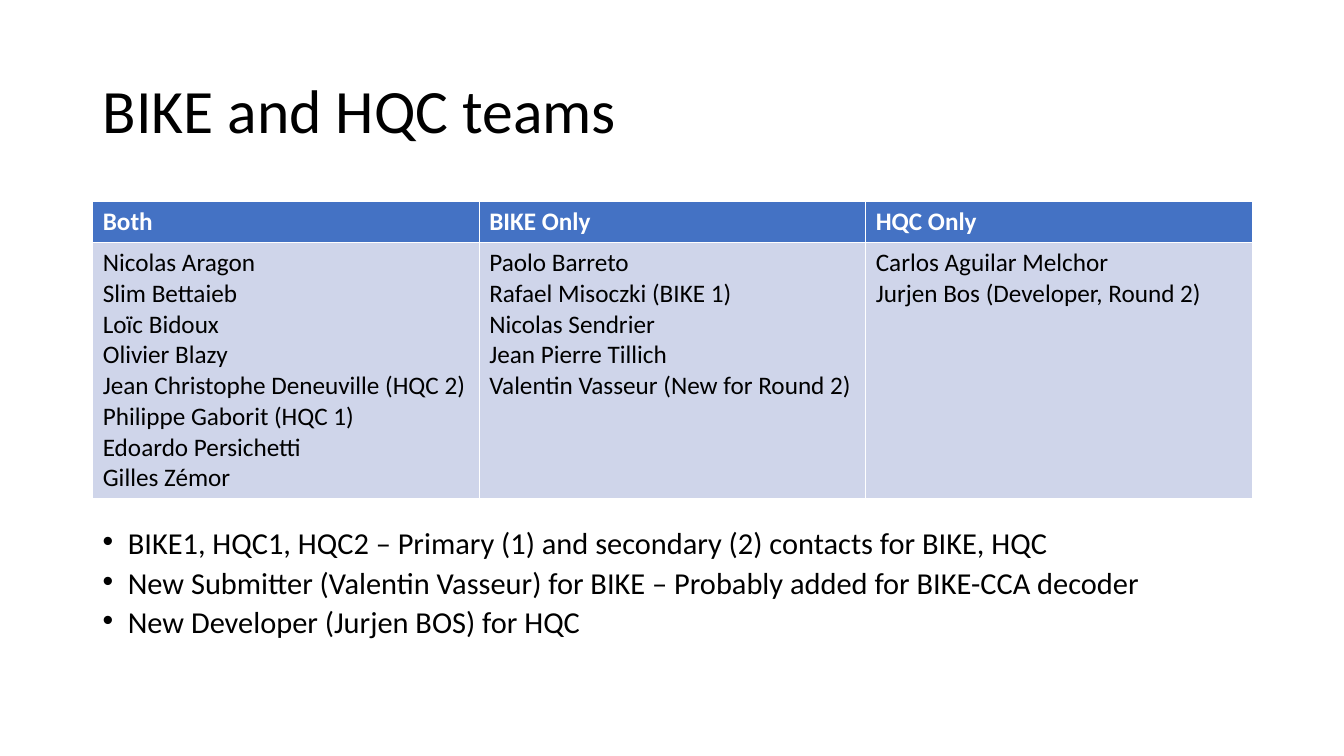
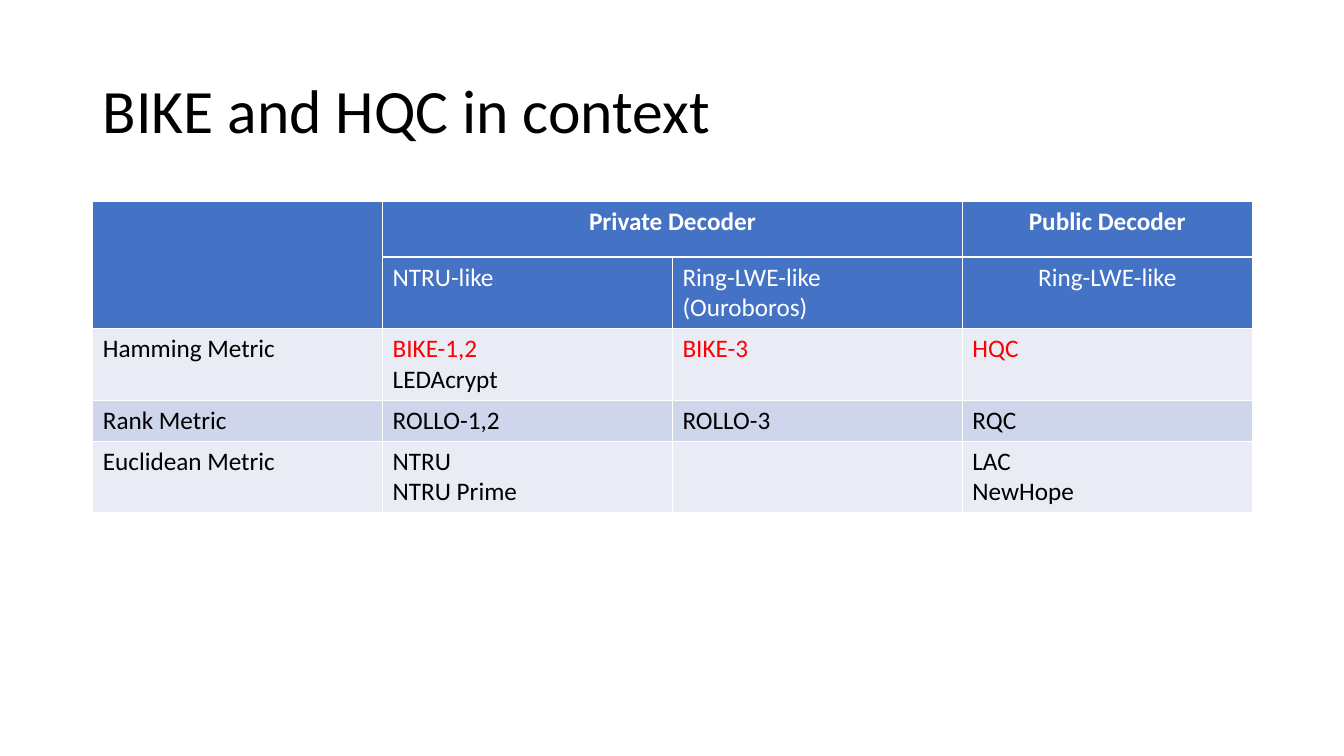
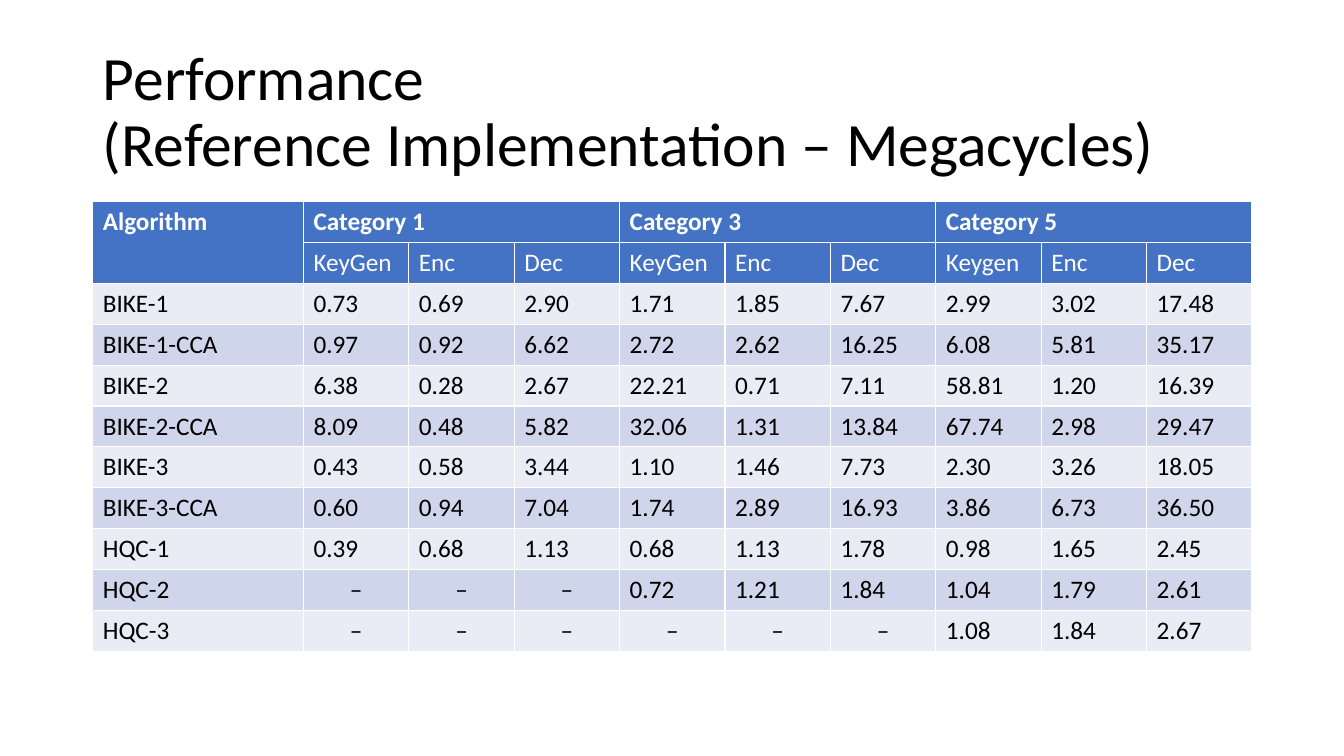
from dataclasses import dataclass

from lxml import etree
from pptx import Presentation
from pptx.dml.color import RGBColor
from pptx.enum.text import MSO_ANCHOR, MSO_AUTO_SIZE, PP_ALIGN
from pptx.oxml.ns import qn
from pptx.util import Inches, Pt

LEFT, MID = PP_ALIGN.LEFT, PP_ALIGN.CENTER
MIDDLE = MSO_ANCHOR.MIDDLE
NO_FIT = MSO_AUTO_SIZE.NONE
TITLE_ONLY = 5


@dataclass(frozen=True)
class Theme:
    font: str = "Calibri"
    black: RGBColor = RGBColor(0, 0, 0)
    white: RGBColor = RGBColor(255, 255, 255)
    red: RGBColor = RGBColor(255, 0, 0)
    head: RGBColor = RGBColor(0x44, 0x72, 0xC4)
    bands: tuple = (RGBColor(0xE9, 0xEB, 0xF5), RGBColor(0xCF, 0xD5, 0xEA))
    title: float = 44
    body: float = 21.7
    cell: float = 18
    left: float = 0.92
    width: float = 11.5
    top: float = 2


@dataclass(frozen=True)
class Span:
    row: int
    col: int
    rows: int
    cols: int


@dataclass(frozen=True)
class Grid:
    """A table; None marks a cell hidden by a span."""
    rows: list
    heights: list
    heads: int = 1
    lead: float | None = None
    spans: tuple = ()
    mid: tuple = ()
    red: tuple = ()


@dataclass(frozen=True)
class Page:
    title: str
    grid: Grid
    notes: tuple = ()


THEME = Theme()

TEAMS = Grid(
    rows=[
        ["Both", "BIKE Only", "HQC Only"],
        ["Nicolas Aragon\nSlim Bettaieb\nLoïc Bidoux\nOlivier Blazy\n"
         "Jean Christophe Deneuville (HQC 2)\nPhilippe Gaborit (HQC 1)\n"
         "Edoardo Persichetti\nGilles Zémor",
         "Paolo Barreto\nRafael Misoczki (BIKE 1)\nNicolas Sendrier\n"
         "Jean Pierre Tillich\nValentin Vasseur (New for Round 2)",
         "Carlos Aguilar Melchor\nJurjen Bos (Developer, Round 2)"],
    ],
    heights=[0.4, 2.5],
)

CONTEXT = Grid(
    rows=[
        ["", "Private Decoder", None, "Public Decoder"],
        [None, "NTRU-like", "Ring-LWE-like\n(Ouroboros)", "Ring-LWE-like"],
        ["Hamming Metric", "BIKE-1,2\nLEDAcrypt", "BIKE-3", "HQC"],
        ["Rank Metric", "ROLLO-1,2", "ROLLO-3", "RQC"],
        ["Euclidean Metric", "NTRU\nNTRU Prime", "", "LAC\nNewHope"],
    ],
    heights=[0.55, 0.7, 0.7, 0.4, 0.7],
    heads=2,
    spans=(Span(0, 0, 2, 1), Span(0, 1, 1, 2)),
    mid=("Private Decoder", "Public Decoder", "Ring-LWE-like"),
    red=("BIKE-1,2", "BIKE-3", "HQC"),
)

SPEED = """\
BIKE-1 0.73 0.69 2.90 1.71 1.85 7.67 2.99 3.02 17.48
BIKE-1-CCA 0.97 0.92 6.62 2.72 2.62 16.25 6.08 5.81 35.17
BIKE-2 6.38 0.28 2.67 22.21 0.71 7.11 58.81 1.20 16.39
BIKE-2-CCA 8.09 0.48 5.82 32.06 1.31 13.84 67.74 2.98 29.47
BIKE-3 0.43 0.58 3.44 1.10 1.46 7.73 2.30 3.26 18.05
BIKE-3-CCA 0.60 0.94 7.04 1.74 2.89 16.93 3.86 6.73 36.50
HQC-1 0.39 0.68 1.13 0.68 1.13 1.78 0.98 1.65 2.45
HQC-2 – – – 0.72 1.21 1.84 1.04 1.79 2.61
HQC-3 – – – – – – 1.08 1.84 2.67"""

CYCLES = Grid(
    rows=[
        ["Algorithm", "Category 1", None, None, "Category 3", None, None,
         "Category 5", None, None],
        [None, "KeyGen", "Enc", "Dec", "KeyGen", "Enc", "Dec",
         "Keygen", "Enc", "Dec"],
        *(line.split() for line in SPEED.splitlines()),
    ],
    heights=[0.4] * 11,
    heads=2,
    lead=2.09,
    spans=(Span(0, 0, 2, 1), *(Span(0, col, 1, 3) for col in (1, 4, 7))),
    mid=("–",),
)

PAGES = (
    Page("BIKE and HQC teams", TEAMS, (
        "BIKE1, HQC1, HQC2 – Primary (1) and secondary (2) contacts for BIKE, HQC",
        "New Submitter (Valentin Vasseur) for BIKE – Probably added for BIKE-CCA decoder",
        "New Developer (Jurjen BOS) for HQC",
    )),
    Page("BIKE and HQC in context", CONTEXT),
    Page("Performance\n(Reference Implementation – Megacycles)", CYCLES),
)


def style(para, size: float, color: RGBColor, bold: bool = False, align=LEFT) -> None:
    para.alignment = align
    font = para.font
    font.name, font.size, font.bold = THEME.font, Pt(size), bold
    font.color.rgb = color


def add_title(slide, text: str) -> None:
    shape = slide.shapes.title
    shape.left, shape.top = Inches(THEME.left), Inches(0.4)
    shape.width, shape.height = Inches(THEME.width), Inches(1.45)
    frame = shape.text_frame
    frame.auto_size, frame.vertical_anchor = NO_FIT, MIDDLE
    para = frame.paragraphs[0]
    para.text = text
    para.line_spacing = 0.9
    style(para, THEME.title, THEME.black)


def fill_cell(cell, text: str, row: int, grid: Grid) -> None:
    head = row < grid.heads
    cell.fill.solid()
    cell.fill.fore_color.rgb = THEME.head if head else THEME.bands[row % 2]
    cell.text_frame.text = text
    align = MID if text in grid.mid else LEFT
    for para in cell.text_frame.paragraphs:
        color = THEME.white if head else THEME.black
        if para.text in grid.red:
            color = THEME.red
        style(para, THEME.cell, color, row == 0, align)


def add_grid(slide, grid: Grid) -> None:
    """Draw the table; its default style gives the white rules."""
    count = len(grid.rows[0])
    frame = slide.shapes.add_table(
        len(grid.rows), count, Inches(THEME.left), Inches(THEME.top),
        Inches(THEME.width), Inches(sum(grid.heights)))
    table = frame.table
    lead = grid.lead or THEME.width / count
    rest = (THEME.width - lead) / (count - 1)
    for col, column in enumerate(table.columns):
        column.width = Inches(rest if col else lead)
    for row, high in enumerate(grid.heights):
        table.rows[row].height = Inches(high)
    for row, texts in enumerate(grid.rows):
        for col, text in enumerate(texts):
            fill_cell(table.cell(row, col), text or "", row, grid)
    for span in grid.spans:
        end = table.cell(span.row + span.rows - 1, span.col + span.cols - 1)
        table.cell(span.row, span.col).merge(end)


def add_bullet(para) -> None:
    props = para._p.get_or_add_pPr()
    props.set("marL", str(Inches(0.25)))
    props.set("indent", str(Inches(-0.25)))
    etree.SubElement(props, qn("a:buFont"), typeface="Arial")
    etree.SubElement(props, qn("a:buChar"), char="•")


def add_notes(slide, lines: tuple) -> None:
    """Draw the bulleted remarks below the table."""
    box = slide.shapes.add_textbox(
        Inches(THEME.left), Inches(5.25), Inches(THEME.width), Inches(1.5))
    frame = box.text_frame
    frame.word_wrap = True
    frame.text = "\n".join(lines)
    for index, para in enumerate(frame.paragraphs):
        para.line_spacing = 0.7
        para.space_before = Pt(10 if index else 0)
        add_bullet(para)
        style(para, THEME.body, THEME.black)


def main() -> None:
    deck = Presentation()
    deck.slide_width, deck.slide_height = Inches(13.33), Inches(7.5)
    for page in PAGES:
        slide = deck.slides.add_slide(deck.slide_layouts[TITLE_ONLY])
        add_title(slide, page.title)
        add_grid(slide, page.grid)
        if page.notes:
            add_notes(slide, page.notes)
    deck.save("out.pptx")


if __name__ == "__main__":
    main()
